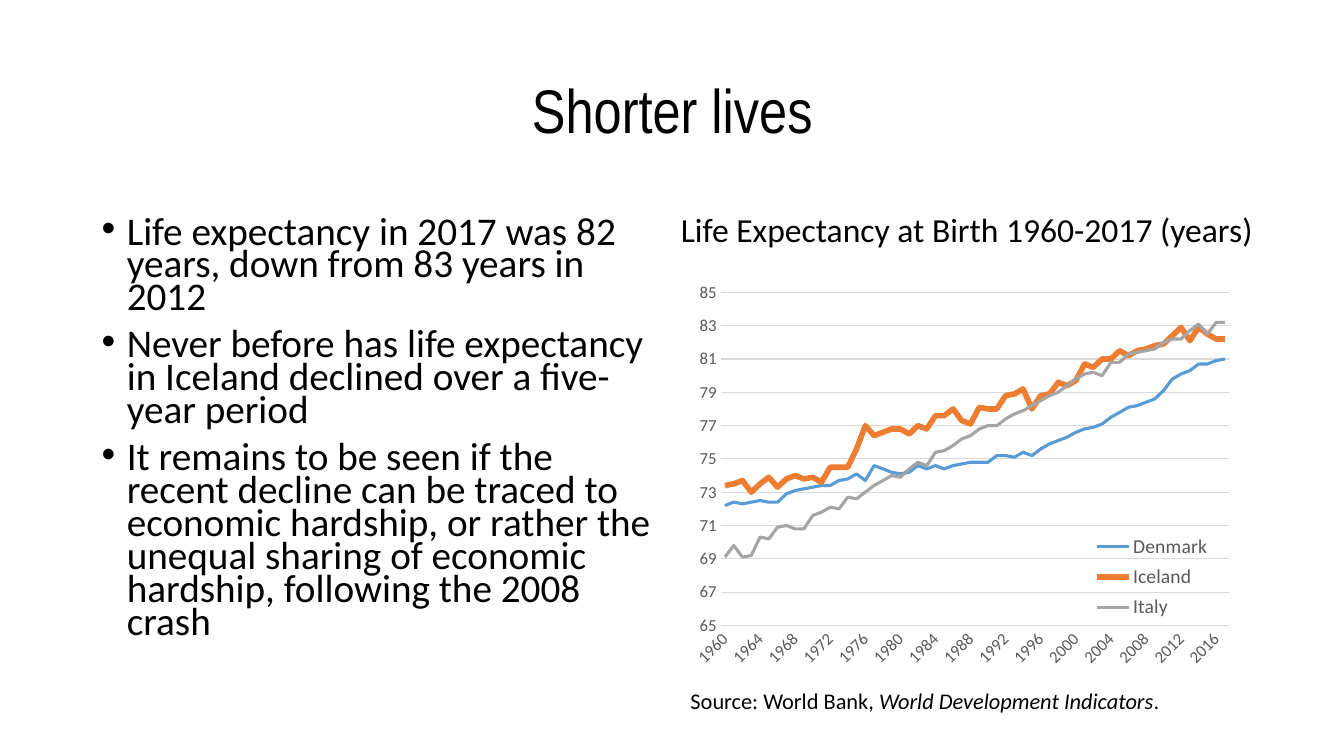
from dataclasses import dataclass

from lxml import etree
from pptx import Presentation
from pptx.chart.data import CategoryChartData
from pptx.dml.color import RGBColor
from pptx.enum.chart import XL_CHART_TYPE, XL_LEGEND_POSITION, XL_TICK_MARK
from pptx.enum.text import MSO_ANCHOR, MSO_AUTO_SIZE, PP_ALIGN
from pptx.oxml import parse_xml
from pptx.oxml.ns import nsdecls, qn
from pptx.util import Inches, Pt

LINE = XL_CHART_TYPE.LINE
BOTTOM = XL_LEGEND_POSITION.BOTTOM
NO_TICK = XL_TICK_MARK.NONE
CENTER = PP_ALIGN.CENTER
LEFT = PP_ALIGN.LEFT
TOP, MIDDLE, LOW = MSO_ANCHOR.TOP, MSO_ANCHOR.MIDDLE, MSO_ANCHOR.BOTTOM


@dataclass(frozen=True)
class Theme:
    head: str = "Arial Narrow"
    body: str = "Calibri"
    ink: RGBColor = RGBColor(0, 0, 0)
    grey: RGBColor = RGBColor(0x59, 0x59, 0x59)
    grid: RGBColor = RGBColor(0xD9, 0xD9, 0xD9)
    blue: RGBColor = RGBColor(0x5B, 0x9B, 0xD5)
    orange: RGBColor = RGBColor(0xED, 0x7D, 0x31)
    silver: RGBColor = RGBColor(0xA5, 0xA5, 0xA5)
    title: int = 44
    point: int = 28
    label: int = 24
    note: int = 16
    key: int = 14
    tick: int = 12


theme = Theme()


def style(font, size, color=theme.ink, name=theme.body):
    font.name, font.size = name, Pt(size)
    font.color.rgb = color


def layout(x, y, w, h, inner=False):
    target = '<c:layoutTarget val="inner"/>' if inner else ""
    modes = '<c:xMode val="edge"/><c:yMode val="edge"/>'
    sizes = {"x": x, "y": y, "w": w, "h": h}
    spots = "".join(f'<c:{k} val="{v}"/>' for k, v in sizes.items())
    return parse_xml(f'<c:layout {nsdecls("c")}><c:manualLayout>{target}{modes}'
                     f'{spots}</c:manualLayout></c:layout>')


deck = Presentation()
deck.slide_width, deck.slide_height = Inches(13.33), Inches(7.5)
slide = deck.slides.add_slide(deck.slide_layouts[5])
shapes = slide.shapes

# Title
title = shapes.title
place = {"left": 0.92, "top": 0.4, "width": 11.5, "height": 1.45}
for key, value in place.items():
    setattr(title, key, Inches(value))
title.text_frame.text = "Shorter lives"
title.text_frame.vertical_anchor = MIDDLE
line = title.text_frame.paragraphs[0]
line.alignment, line.line_spacing = CENTER, 0.9
style(line.runs[0].font, theme.title, name=theme.head)

# Bullets, chart heading and source note: each run is (text, italic)
points = [
    "Life expectancy in 2017 was 82 years, down from 83 years in 2012",
    "Never before has life expectancy in Iceland declined over a five-year period",
    "It remains to be seen if the recent decline can be traced to economic hardship, "
    "or rather the unequal sharing of economic hardship, following the 2008 crash",
]
heading = "Life Expectancy at Birth 1960-2017 (years)"
source = [("Source: World Bank, ", False), ("World Development Indicators", True),
          (".", False)]
blocks = [
    ((0.91, 2.12, 5.64, 4.75), TOP, theme.point, True, [[(p, False)] for p in points],
     {"alignment": LEFT, "line_spacing": 0.7, "space_before": Pt(10)}),
    ((6.36, 1.84, 6.46, 0.69), LOW, theme.label, False, [[(heading, False)]],
     {"alignment": CENTER, "line_spacing": 0.9, "space_before": Pt(10)}),
    ((6.75, 6.77, 6.05, 0.37), TOP, theme.note, False, [source], {"alignment": LEFT}),
]
for spot, anchor, size, dots, rows, form in blocks:
    frame = shapes.add_textbox(*map(Inches, spot)).text_frame
    frame.word_wrap, frame.auto_size = True, MSO_AUTO_SIZE.NONE
    frame.vertical_anchor = anchor
    for i, row in enumerate(rows):
        para = frame.add_paragraph() if i else frame.paragraphs[0]
        for key, value in form.items():
            setattr(para, key, value)
        for text, slant in row:
            run = para.add_run()
            run.text = text
            style(run.font, size)
            run.font.italic = slant
        if dots:
            props = para._p.get_or_add_pPr()
            props.set("marL", str(Inches(0.25)))
            props.set("indent", str(-Inches(0.25)))
            etree.SubElement(props, qn("a:buFont")).set("typeface", "Arial")
            etree.SubElement(props, qn("a:buChar")).set("char", "•")

# Chart data, one value a year
denmark = [
    72.2, 72.4, 72.3, 72.4, 72.5, 72.4, 72.4, 72.9, 73.1, 73.2, 73.3, 73.4, 73.4, 73.7, 73.8,
    74.1, 73.7, 74.6, 74.4, 74.2, 74.1, 74.2, 74.6, 74.4, 74.6, 74.4, 74.6, 74.7, 74.8, 74.8,
    74.8, 75.2, 75.2, 75.1, 75.4, 75.2, 75.6, 75.9, 76.1, 76.3, 76.6, 76.8, 76.9, 77.1, 77.5,
    77.8, 78.1, 78.2, 78.4, 78.6, 79.1, 79.8, 80.1, 80.3, 80.7, 80.7, 80.9, 81]
iceland = [
    73.4, 73.5, 73.7, 73, 73.5, 73.9, 73.3, 73.8, 74, 73.8, 73.9, 73.6, 74.5, 74.5, 74.5,
    75.6, 77, 76.4, 76.6, 76.8, 76.8, 76.5, 77, 76.8, 77.6, 77.6, 78, 77.3, 77.1, 78.1,
    78, 78, 78.8, 78.9, 79.2, 78, 78.8, 78.9, 79.6, 79.4, 79.7, 80.7, 80.5, 81, 81,
    81.5, 81.2, 81.5, 81.6, 81.8, 81.9, 82.4, 82.9, 82.1, 82.9, 82.5, 82.2, 82.2]
italy = [
    69.1, 69.8, 69.1, 69.2, 70.3, 70.2, 70.9, 71, 70.8, 70.8, 71.6, 71.8, 72.1, 72, 72.7,
    72.6, 73, 73.4, 73.7, 74, 73.9, 74.4, 74.8, 74.6, 75.4, 75.5, 75.8, 76.2, 76.4, 76.8,
    77, 77, 77.4, 77.7, 77.9, 78.2, 78.5, 78.8, 79, 79.4, 79.8, 80.1, 80.2, 80, 80.8,
    80.8, 81.3, 81.4, 81.5, 81.6, 82, 82.2, 82.2, 82.7, 83.1, 82.5, 83.2, 83.2]
lands = [("Denmark", denmark, theme.blue, 2.25), ("Iceland", iceland, theme.orange, 4),
         ("Italy", italy, theme.silver, 2.25)]
data = CategoryChartData(number_format="0.0")
data.categories = [str(year) for year in range(1960, 2018)]
for name, values, color, width in lands:
    data.add_series(name, values)

# Line chart
spot = map(Inches, (6.75, 2.74, 5.67, 4.03))
chart = shapes.add_chart(LINE, *spot, data).chart
chart.has_title = False
style(chart.font, 10)
plot = chart.plots[0]
plot.vary_by_categories = False
for series, (name, values, color, width) in zip(plot.series, lands):
    series.smooth = False
    series.format.line.color.rgb = color
    series.format.line.width = Pt(width)

# Axes: a label every fourth year, a grid line every two years of life
years, ages = chart.category_axis, chart.value_axis
for axis in (years, ages):
    axis.major_tick_mark = axis.minor_tick_mark = NO_TICK
    style(axis.tick_labels.font, theme.tick, theme.grey)
scale = {"minimum_scale": 65, "maximum_scale": 85, "major_unit": 2,
         "has_major_gridlines": True}
for key, value in scale.items():
    setattr(ages, key, value)
ages.tick_labels.number_format = "0"
ages.tick_labels.number_format_is_linked = False
ages.format.line.fill.background()
for rule in (years.format.line, ages.major_gridlines.format.line):
    rule.color.rgb, rule.width = theme.grid, Pt(0.75)
root = chart.element
base = root.find(".//" + qn("c:catAx"))
turn = base.find(qn("c:txPr")).find(qn("a:bodyPr"))
turn.set("rot", "-2700000")
turn.set("vert", "horz")
skip = parse_xml(f'<c:tickLblSkip {nsdecls("c")} val="4"/>')
base.find(qn("c:noMultiLvlLbl")).addprevious(skip)

# Legend and plot placement
chart.has_legend = True
legend = chart.legend
legend.position, legend.include_in_layout = BOTTOM, False
style(legend.font, theme.key, theme.grey)
area, box = root.find(".//" + qn("c:plotArea")), root.find(".//" + qn("c:legend"))
for part in (area, box):
    for old in part.findall(qn("c:layout")):
        part.remove(old)
area.insert(0, layout(0.07, 0.04, 0.89, 0.82, inner=True))
box.find(qn("c:legendPos")).addnext(layout(0.71, 0.62, 0.23, 0.24))

deck.save("out.pptx")
